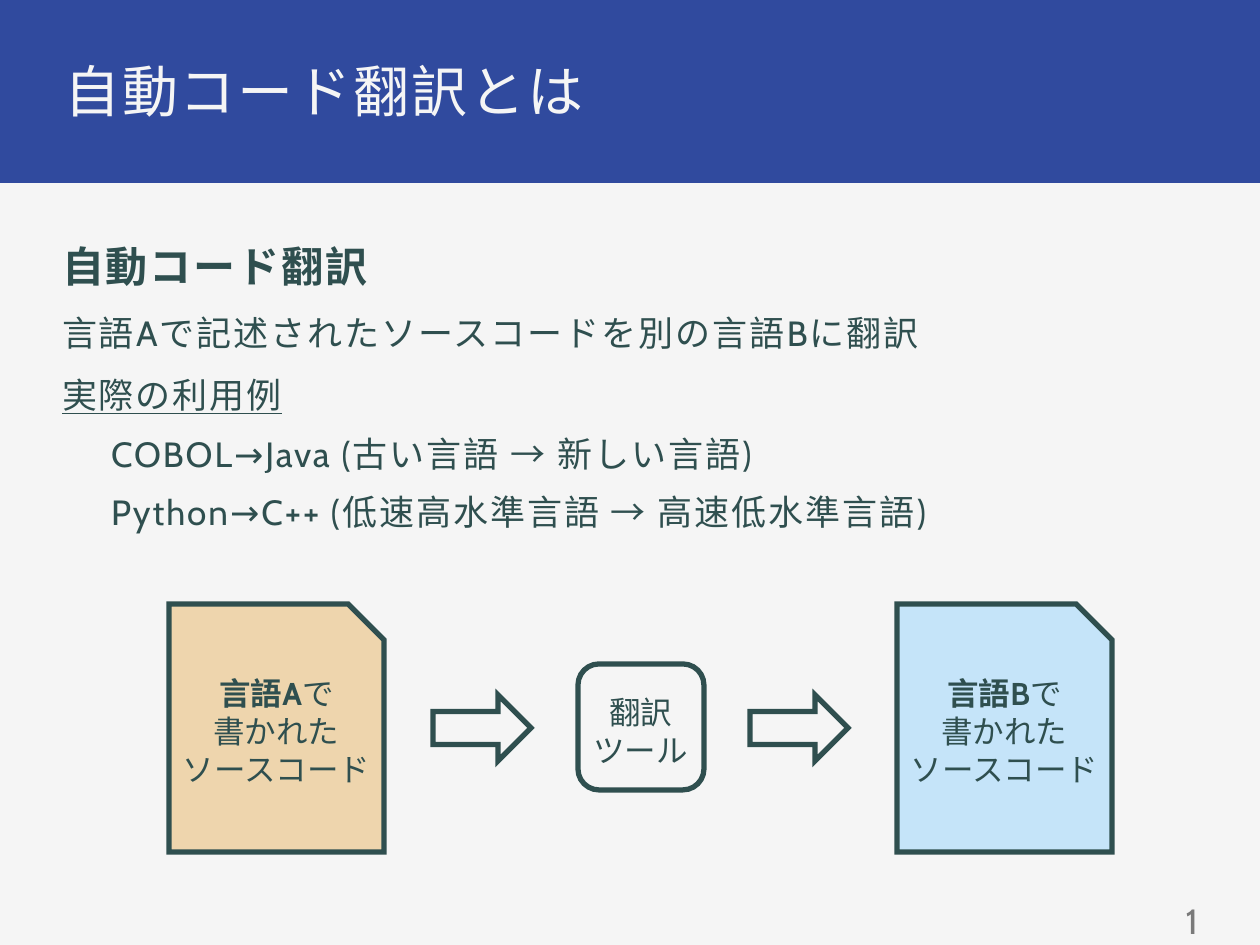
from pptx import Presentation
from pptx import util as u
from pptx.dml.color import RGBColor
from pptx.enum import shapes, text
from pptx.oxml.ns import qn
from lxml import etree

PAPER = RGBColor(0xF5, 0xF5, 0xF5)
BLUE = RGBColor(0x30, 0x4A, 0x9E)
SLATE = RGBColor(0x2F, 0x4F, 0x4F)
GRAY = RGBColor(0x7A, 0x7A, 0x7A)
SAND = RGBColor(0xEE, 0xD5, 0xAD)
SKY = RGBColor(0xC5, 0xE4, 0xF9)
KIND = shapes.MSO_SHAPE
ALIGN = text.PP_ALIGN
SCALE = 914400 / 126


def px(length):
    return u.Emu(round(length * SCALE))


class Painter:
    """Draws styled elements on the current slide."""

    def __init__(self, deck, font="Cabin"):
        self.font = font
        self.page = deck.slides.add_slide(deck.slide_layouts[6])
        fill = self.page.background.fill
        fill.solid()
        fill.fore_color.rgb = PAPER

    def shape(self, kind, area, fill=None, line=None):
        shape = self.page.shapes.add_shape(kind, *map(px, area))
        shape.shadow.inherit = False
        if fill is None:
            shape.fill.background()
        else:
            shape.fill.solid()
            shape.fill.fore_color.rgb = fill
        if line is None:
            shape.line.fill.background()
        else:
            shape.line.color.rgb = line
            shape.line.width = u.Pt(3)
            outline = shape.line._get_or_add_ln()
            etree.SubElement(outline, qn("a:miter"), lim="800000")
        return shape

    def box(self, area, insets, wrap=True, anchor=text.MSO_ANCHOR.TOP):
        frame = self.page.shapes.add_textbox(*map(px, area)).text_frame
        frame.word_wrap = wrap
        frame.vertical_anchor = anchor
        (frame.margin_left, frame.margin_top,
         frame.margin_right, frame.margin_bottom) = map(px, insets)
        return frame

    def para(self, frame, spans, size, color=SLATE, align=ALIGN.LEFT,
             before=0, leading=1.0, indent=0, spacing=0):
        first = frame.paragraphs[0]
        para = frame.add_paragraph() if first.runs else first
        para.alignment = align
        para.space_before = u.Pt(before)
        para.line_spacing = leading
        if indent:
            para._p.get_or_add_pPr().set("marL", str(px(indent)))
        for words, bold, underline in spans:
            span = para.add_run()
            span.text = words
            span.font.name = self.font
            span.font.size = u.Pt(size)
            span.font.color.rgb = color
            span.font.bold = bold
            span.font.underline = underline
            if spacing:
                span.font._element.set("spc", str(spacing))

    def label(self, area, lines, wrap=True):
        frame = self.box(area, (13, 6, 13, 6), wrap)
        for spans in lines:
            self.para(frame, spans, 18, align=ALIGN.CENTER)

    def document(self, left, language, fill):
        self.shape(KIND.SNIP_1_RECTANGLE, (left, 604, 215, 248), fill, SLATE)
        self.label((left, 668, 215, 127), [
            [(language, True, False), ("で", False, False)],
            [("書かれた", False, False)],
            [("ソースコード", False, False)],
        ])


def main():
    deck = Presentation()
    deck.slide_width, deck.slide_height = px(1260), px(945)
    painter = Painter(deck)

    painter.shape(KIND.RECTANGLE, (-3, -3, 1265, 186), BLUE)
    title = painter.box((54, 54, 1150, 74), (10, 10, 10, 8))
    painter.para(title, [("自動コード翻訳とは", False, False)], 32, PAPER,
                 ALIGN.JUSTIFY, before=16, leading=0.9, spacing=110)

    body = painter.box((54, 238, 1150, 653), (8, 8, 8, 8))
    for words, size, bold, underline, before, indent in (
        ("自動コード翻訳", 24, True, False, 14, 0),
        ("言語Aで記述されたソースコードを別の言語Bに翻訳", 20, False, False, 14, 0),
        ("実際の利用例", 20, False, True, 14, 0),
        ("COBOL→Java (古い言語 → 新しい言語)", 20, False, False, 12, 49),
        ("Python→C++ (低速高水準言語 → 高速低水準言語)", 20, False, False, 12, 49),
    ):
        painter.para(body, [(words, bold, underline)], size, before=before,
                     leading=0.9, indent=indent, spacing=110)

    number = painter.box((922, 896, 284, 49), (8, 8, 8, 8),
                         anchor=text.MSO_ANCHOR.MIDDLE)
    painter.para(number, [("1", False, False)], 20, GRAY, ALIGN.RIGHT)

    painter.document(169, "言語A", SAND)
    painter.document(897, "言語B", SKY)
    for left in (433, 750):
        painter.shape(KIND.RIGHT_ARROW, (left, 695, 98, 66), line=SLATE)
    painter.shape(KIND.ROUNDED_RECTANGLE, (578, 664, 126, 126), line=SLATE)
    painter.label((580, 687, 121, 89), [
        [("翻訳", False, False)],
        [("ツール", False, False)],
    ], wrap=False)

    deck.save("out.pptx")


if __name__ == "__main__":
    main()
